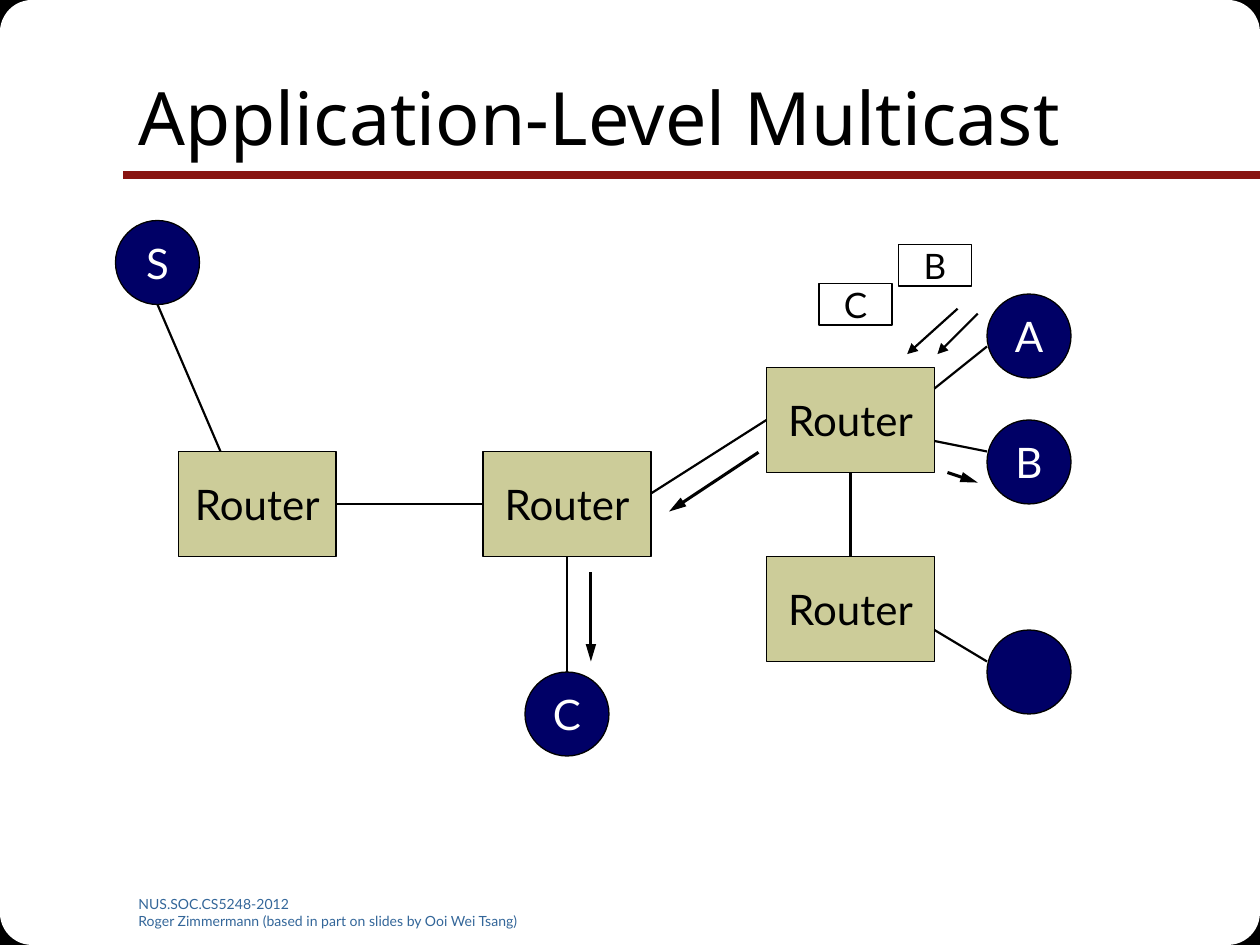
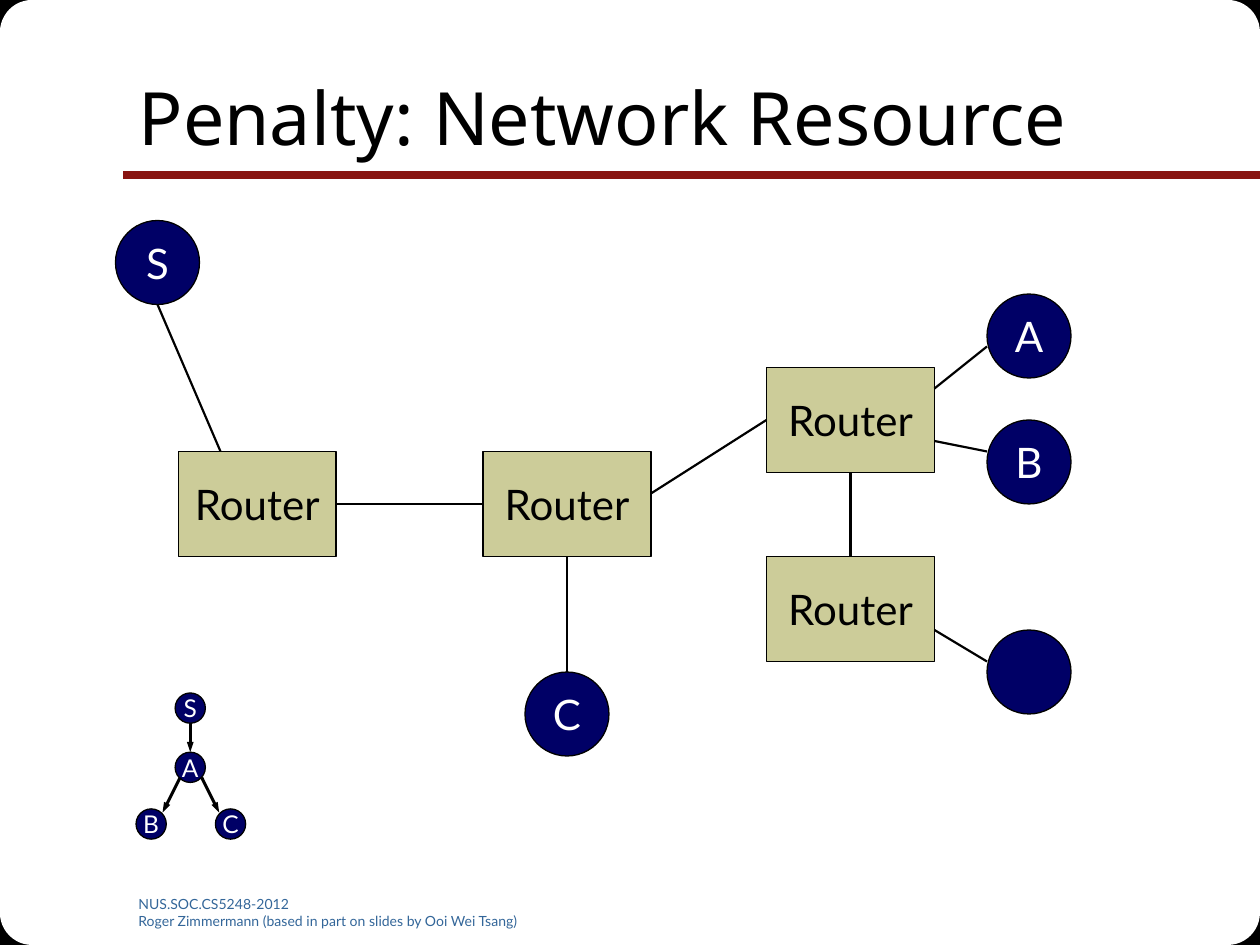
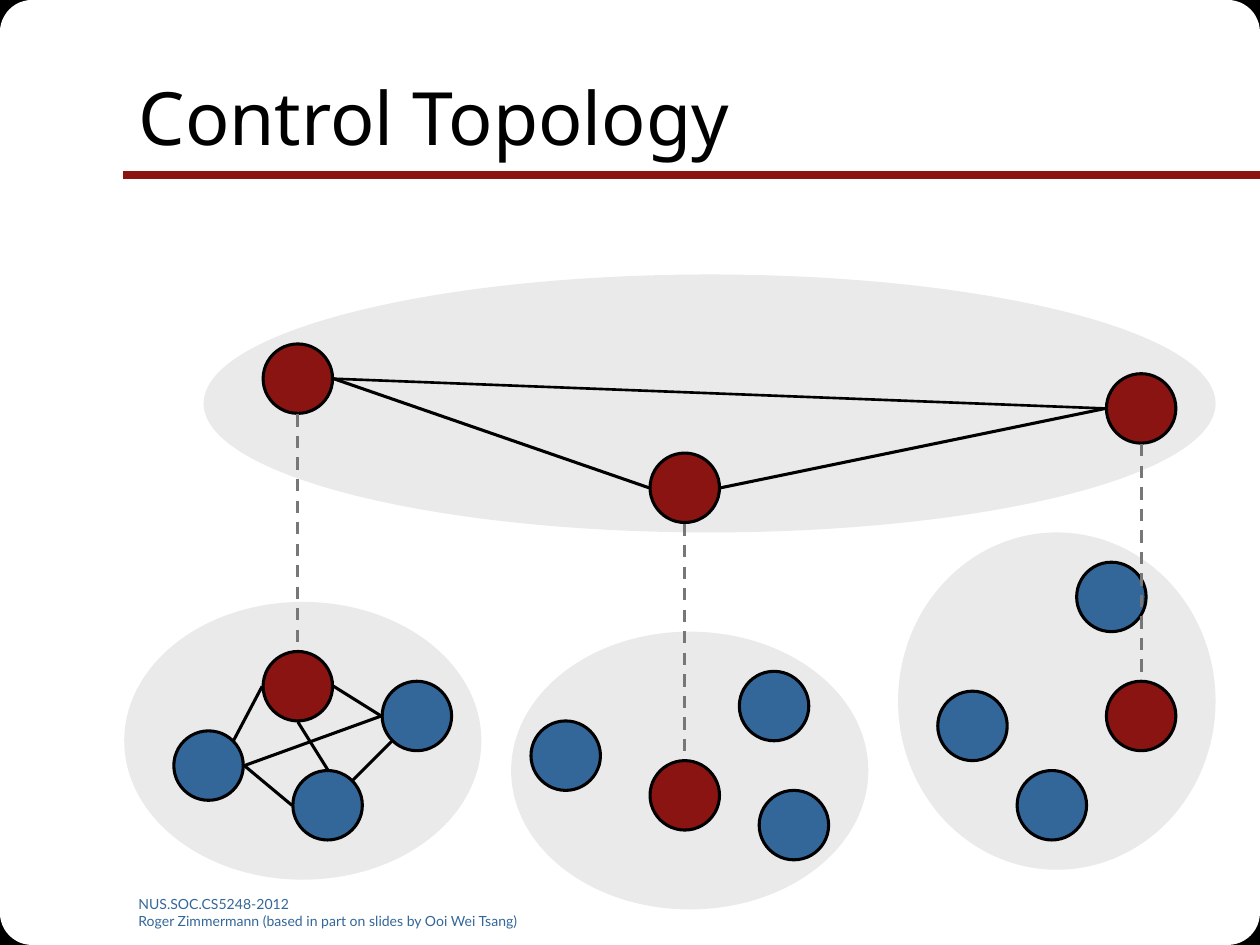
from collections import namedtuple
from dataclasses import dataclass
from lxml.etree import SubElement
from pptx import Presentation
from pptx.dml.color import RGBColor
from pptx.enum.dml import MSO_LINE
from pptx.enum.shapes import MSO_CONNECTOR, MSO_SHAPE
from pptx.enum.text import MSO_ANCHOR, MSO_AUTO_SIZE, PP_ALIGN
from pptx.oxml.ns import qn
from pptx.util import Inches, Pt


@dataclass(frozen=True)
class Theme:
    black: str = "000000"
    white: str = "FFFFFF"
    red: str = "891411"
    blue: str = "336699"
    navy: str = "000066"
    sand: str = "CCCC99"
    pale: str = "EAEAEA"
    gray: str = "777777"
    head: str = "Noto Sans"
    body: str = "Lato"
    title: int = 42
    node: int = 24
    packet: int = 20
    small: int = 14
    foot: int = 8
    hair: float = 0.75
    thin: float = 1.25
    fine: float = 1.5
    thick: float = 1.75
    rule: float = 4.5


Grid = namedtuple("Grid", "left top step")
T = Theme()
W, H = 10, 7.5
PAGE = Grid(0, 0, 1)
NET = Grid(0, 0, 1 / 12)
MESH = Grid(1.38, 2.73, 1 / 12.7)
RECT, OVAL, ROUND = MSO_SHAPE.RECTANGLE, MSO_SHAPE.OVAL, MSO_SHAPE.ROUNDED_RECTANGLE


def put(slide, kind, grid, box, text="", fill=None, line=None, width=T.hair, size=T.node,
        color=T.black, font=T.body, align=PP_ALIGN.CENTER, anchor=MSO_ANCHOR.MIDDLE,
        wrap=False, inset=(0, 0)):
    x, y, w, h = [Inches(n * grid.step) for n in box]
    place = x + Inches(grid.left), y + Inches(grid.top), w, h
    if kind == "title":
        shape = slide.shapes.title
        shape.left, shape.top, shape.width, shape.height = place
        shape.element.getparent().append(shape.element)
    elif kind == "text":
        shape = slide.shapes.add_textbox(*place)
    else:
        shape = slide.shapes.add_shape(kind, *place)
        shape.shadow.inherit = False
        shape.fill.solid()
        shape.fill.fore_color.rgb = RGBColor.from_string(fill)
        if line:
            shape.line.color.rgb = RGBColor.from_string(line)
            shape.line.width = Pt(width)
        else:
            shape.line.fill.background()
    if text:
        frame = shape.text_frame
        frame.text = text
        frame.auto_size = MSO_AUTO_SIZE.NONE
        frame.word_wrap = wrap
        frame.vertical_anchor = anchor
        frame.margin_left = frame.margin_right = Inches(inset[0])
        frame.margin_top = frame.margin_bottom = Inches(inset[1])
        for para in frame.paragraphs:
            para.alignment = align
            for run in para.runs:
                run.font.size = Pt(size)
                run.font.name = font
                run.font.color.rgb = RGBColor.from_string(color)


def link(slide, grid, start, end, width=T.thin, color=T.black, dash=None, head=None):
    spots = [Inches(base + n * grid.step)
             for n, base in zip((*start, *end), (grid.left, grid.top) * 2)]
    wire = slide.shapes.add_connector(MSO_CONNECTOR.STRAIGHT, *spots)
    wire.line.color.rgb = RGBColor.from_string(color)
    wire.line.width = Pt(width)
    if dash:
        wire.line.dash_style = dash
    prop = wire.element.spPr
    if head:
        SubElement(prop.find(qn("a:ln")), qn("a:tailEnd"), type="triangle", w=head[0], len=head[1])
    SubElement(prop, qn("a:effectLst"))


deck = Presentation()
deck.slide_width, deck.slide_height = Inches(W), Inches(H)

slides = []
for name in ("Application-Level Multicast", "Penalty: Network Resource", "Control Topology"):
    slide = deck.slides.add_slide(deck.slide_layouts[5])
    for kind, side, fill, line in ((RECT, 0.43, T.black, T.black), (ROUND, 1.53, T.white, None)):
        for x in (0, W - side):
            for y in (0, H - side):
                put(slide, kind, PAGE, (x, y, side, side), fill=fill, line=line)
    link(slide, PAGE, (W, 1.39), (0.98, 1.39), width=T.rule, color=T.red)
    put(slide, "text", PAGE, (1, 7.06, 3.42, 0.28),
        "NUS.SOC.CS5248-2012\nRoger Zimmermann (based in part on slides by Ooi Wei Tsang)",
        size=T.foot, color=T.blue, align=PP_ALIGN.LEFT, anchor=MSO_ANCHOR.TOP, inset=(0.1, 0.05))
    put(slide, "title", PAGE, (1, 0.3, 8.5, 1.25), name, size=T.title, font=T.head,
        align=PP_ALIGN.LEFT, wrap=True, inset=(0.1, 0.05))
    slides.append(slide)
cast, cost, plan = slides

for slide in (cast, cost):
    for x, y, w in ((46, 43, 16), (17, 43, 15), (73, 35, 16), (73, 53, 16)):
        put(slide, RECT, NET, (x, y, w, 10), "Router", fill=T.sand, line=T.black)
    for name, x, y in (("A", 94, 28), ("B", 94, 40), ("", 94, 60), ("C", 50, 64), ("S", 11, 21)):
        put(slide, OVAL, NET, (x, y, 8, 8), name, fill=T.navy, line=T.black, color=T.white)
    for start, end in (((89, 37), (94, 33)), ((89, 42), (94, 43)), ((89, 60), (94, 63)),
                       ((81, 45), (81, 53)), ((62, 47), (73, 40)), ((32, 48), (46, 48)),
                       ((54, 53), (54, 64)), ((15, 29), (21, 43))):
        link(slide, NET, start, end)

for name, x, y in (("C", 6.5, 2.25), ("B", 7.13, 1.94)):
    put(cast, RECT, PAGE, (x, y, 0.58, 0.33), name, fill=T.white, line=T.black, size=T.packet)
for start, end in (((7.6, 2.45), (7.2, 2.81)), ((7.76, 2.49), (7.44, 2.81))):
    link(cast, PAGE, start, end, head=("med", "med"))
for start, end in (((7.52, 3.75), (7.76, 3.83)), ((6.02, 3.59), (5.31, 4.06)),
                   ((4.69, 4.54), (4.69, 5.25))):
    link(cast, PAGE, start, end, width=T.thick, head=("med", "lg"))

for name, x, y in (("S", 1.39, 5.5), ("A", 1.39, 5.97), ("B", 1.08, 6.42), ("C", 1.71, 6.42)):
    put(cost, OVAL, PAGE, (x, y, 0.24, 0.24), name, fill=T.navy, line=T.black,
        size=T.small, color=T.white)
for start, end in (((1.51, 5.74), (1.51, 5.97)), ((1.6, 6.17), (1.74, 6.45)),
                   ((1.43, 6.17), (1.29, 6.45))):
    link(cost, PAGE, start, end, width=T.thick, head=("sm", "med"))

for box in ((3, -7, 102, 26), (73, 19, 32, 34), (34, 29, 36, 28), (-5, 26, 36, 28)):
    put(plan, OVAL, MESH, box, fill=T.pale)

peers = [(0, 39), (12, 43), (21, 34), (36, 38), (59, 45), (57, 33), (91, 22), (77, 35), (85, 43)]
leads = [(9, 31), (48, 42), (94, 34)]
tops = [(9, 0), (48, 11), (94, 3)]
for fill, spots in ((T.blue, peers), (T.red, leads + tops)):
    for x, y in spots:
        put(plan, OVAL, MESH, (x, y, 7, 7), fill=fill, line=T.black, width=T.thick)

sides = {"left": (-0.1, 3.5), "right": (7.1, 3.5), "top": (3.5, -0.1), "base": (3.5, 7.1),
         "ne": (6, 1), "sw": (1, 6)}
west, south, east = peers[:3]
lead = leads[0]
wires = [(top, "base", low, "top", T.thick, T.gray, MSO_LINE.DASH)
         for top, low in zip(tops, leads)]
wires += [(a, p, b, q, width, T.black, None) for a, p, b, q, width in (
    (tops[0], "right", tops[2], "left", T.fine),
    (tops[0], "right", tops[1], "left", T.thick),
    (tops[1], "right", tops[2], "left", T.thick),
    (lead, "right", east, "left", T.thick),
    (lead, "left", west, "ne", T.thick),
    (west, "right", south, "left", T.thick),
    (south, "ne", east, "sw", T.thick),
    (lead, "base", south, "top", T.thick),
    (west, "right", east, "left", T.thick))]
for a, p, b, q, width, color, dash in wires:
    start = a[0] + sides[p][0], a[1] + sides[p][1]
    end = b[0] + sides[q][0], b[1] + sides[q][1]
    link(plan, MESH, start, end, width=width, color=color, dash=dash)

deck.save("out.pptx")
